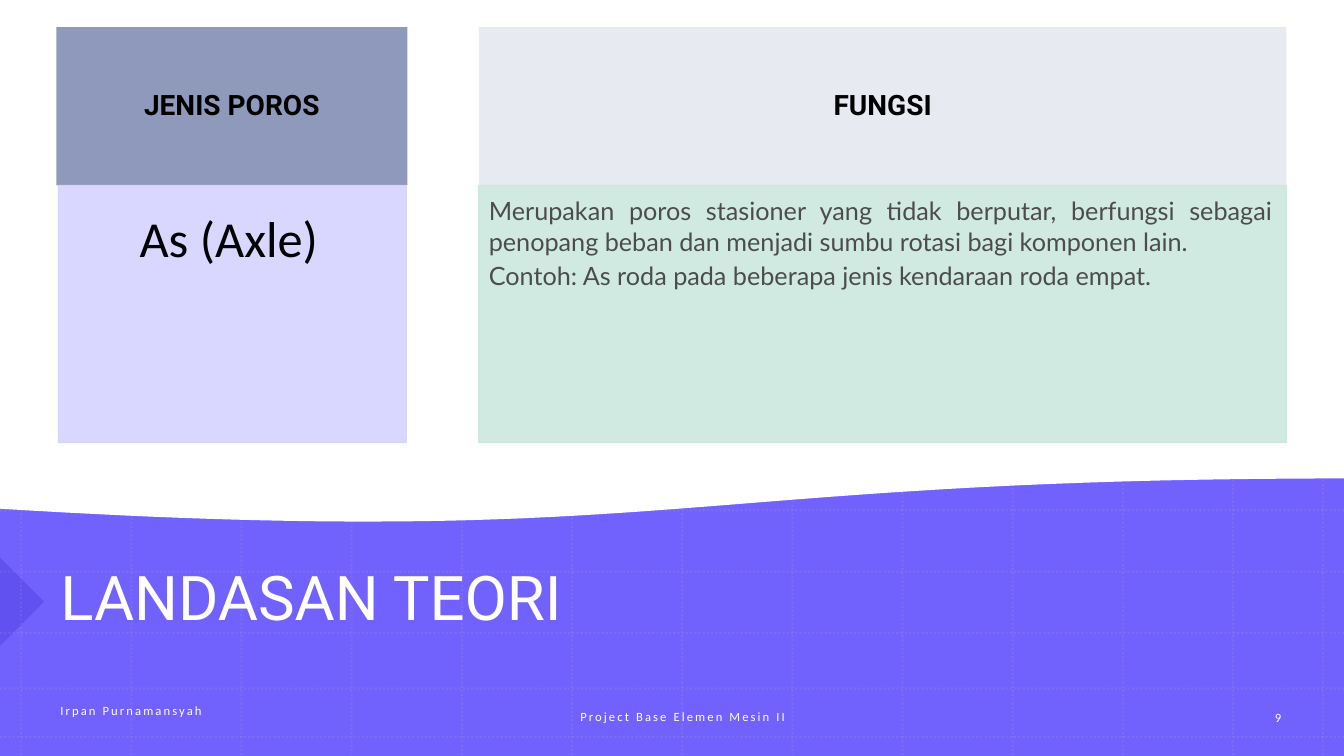
"""Build the LANDASAN TEORI slide about the axle type of shaft."""
from dataclasses import dataclass

from lxml import etree
from pptx import Presentation
from pptx.dml.color import RGBColor
from pptx.enum.dml import MSO_LINE
from pptx.enum.shapes import MSO_CONNECTOR, MSO_SHAPE
from pptx.enum.text import MSO_ANCHOR, PP_ALIGN
from pptx.oxml.ns import qn
from pptx.util import Inches, Pt

COLORS = {
    "violet": "7162FE", "navy": "1201AF", "grid": "B495C2", "white": "FFFFFF",
    "slate": "8F99BB", "lilac": "D5D3FF", "mint": "CCE8DE",
    "black": "000000", "gray": "4C4C4D",
}
WIDTH, HEIGHT = 13.33, 7.5
Box = tuple[float, float, float, float]


@dataclass
class Text:
    lines: tuple[str, ...]
    font: str
    size: float
    color: str
    align: PP_ALIGN = PP_ALIGN.LEFT
    anchor: MSO_ANCHOR = MSO_ANCHOR.MIDDLE
    margins: Box = (0.1, 0.05, 0.1, 0.05)
    bold: bool = False
    line_spacing: float = 1.0
    space_after: float = 0
    tracking: float = 0


@dataclass
class Panel:
    box: Box
    fill: str
    alpha: int
    outlined: bool
    text: Text


@dataclass
class Label:
    box: Box
    text: Text


def rgb(name: str) -> RGBColor:
    return RGBColor.from_string(COLORS[name])


def set_alpha(sp, percent: int) -> None:
    for clr in sp._element.spPr.iter(qn("a:srgbClr")):
        etree.SubElement(clr, qn("a:alpha")).set("val", str(percent * 1000))


def paint(sp, fill: str, line_width: float = 0, alpha: int = 100) -> None:
    sp.shadow.inherit = False
    sp.fill.solid()
    sp.fill.fore_color.rgb = rgb(fill)
    if line_width:
        sp.line.color.rgb = rgb(fill)
        sp.line.width = Pt(line_width)
    else:
        sp.line.fill.background()
    if alpha < 100:
        set_alpha(sp, alpha)


def add_shape(s, kind: MSO_SHAPE, box: Box, fill: str,
              line_width: float = 0, alpha: int = 100):
    sp = s.shapes.add_shape(kind, *map(Inches, box))
    paint(sp, fill, line_width, alpha)
    return sp


def write(sp, text: Text) -> None:
    tf = sp.text_frame
    tf.word_wrap = True
    tf.vertical_anchor = text.anchor
    (tf.margin_left, tf.margin_top,
     tf.margin_right, tf.margin_bottom) = map(Inches, text.margins)
    for i, line in enumerate(text.lines):
        p = tf.add_paragraph() if i else tf.paragraphs[0]
        p.alignment = text.align
        p.line_spacing = text.line_spacing
        p.space_after = Pt(text.space_after)
        r = p.add_run()
        r.text = line
        p.font.name = text.font
        p.font.size = Pt(text.size)
        p.font.bold = text.bold
        p.font.color.rgb = rgb(text.color)
        if text.tracking:
            r._r.get_or_add_rPr().set("spc", str(int(text.tracking * 100)))


def add_grid_line(s, x1: float, y1: float, x2: float, y2: float) -> None:
    line = s.shapes.add_connector(
        MSO_CONNECTOR.STRAIGHT, *map(Inches, (x1, y1, x2, y2)))
    line.line.color.rgb = rgb("grid")
    line.line.width = Pt(1.5)
    line.line.dash_style = MSO_LINE.ROUND_DOT
    set_alpha(line, 20)
    etree.SubElement(line._element.spPr, qn("a:effectLst"))


def add_grid(s) -> None:
    columns = [0.21 + i * (12.23 - 0.21) / 11 for i in range(12)] + [13.12]
    rows = [0.19 + i * (6.28 - 0.19) / 10 for i in range(11)] + [6.83, 7.31]
    for x in columns:
        add_grid_line(s, x, 0, x, HEIGHT)
    for y in rows:
        add_grid_line(s, 0, y, WIDTH, y)


def bezier(a: float, b: float, c: float, d: float, t: float) -> float:
    u = 1 - t
    return u**3 * a + 3 * u**2 * t * b + 3 * u * t**2 * c + t**3 * d


def add_wave(s, steps: int = 60) -> None:
    right, top = 13.35, -0.03
    curve = [(bezier(right, 6.7, 6.66, 0, i / steps),
              bezier(4.74, 4.74, 5.45, 5.04, i / steps))
             for i in range(steps + 1)]
    points = [(Inches(x), Inches(y)) for x, y in [(right, top), *curve]]
    builder = s.shapes.build_freeform(0, Inches(top))
    builder.add_line_segments(points, close=True)
    paint(builder.convert_to_shape(), "white", 1)


def heading(line: str) -> Text:
    return Text((line,), "Roboto", 20, "black", PP_ALIGN.CENTER,
                margins=(0.16, 0.09, 0.16, 0.09), bold=True, line_spacing=0.9)


def footer(line: str, align: PP_ALIGN = PP_ALIGN.CENTER,
           bottom: float = 0.05) -> Text:
    return Text((line,), "Calibri", 9, "white", align,
                margins=(0.1, 0.05, 0.1, bottom), tracking=1.5)


PANELS = [
    Panel((0.56, 0.27, 3.48, 1.57), "slate", 100, False,
          heading("JENIS POROS")),
    Panel((0.58, 1.84, 3.45, 2.55), "lilac", 90, True,
          Text(("As (Axle)",), "Calibri", 36, "black", PP_ALIGN.CENTER,
               MSO_ANCHOR.TOP, (0.21, 0.21, 0.28, 0.32))),
    Panel((4.75, 0.27, 8.01, 1.57), "slate", 20, False, heading("FUNGSI")),
    Panel((4.75, 1.84, 8.01, 2.55), "mint", 90, True,
          Text(("Merupakan poros stasioner yang tidak berputar, berfungsi "
                "sebagai penopang beban dan menjadi sumbu rotasi bagi "
                "komponen lain.",
                "Contoh: As roda pada beberapa jenis kendaraan roda empat."),
               "Lato", 18, "gray", PP_ALIGN.JUSTIFY, MSO_ANCHOR.TOP,
               (0.1, 0.1, 0.14, 0.16), space_after=2.7)),
]
LABELS = [
    Label((0.5, 5.09, 11.75, 1.74),
          Text(("LANDASAN TEORI",), "Roboto", 44, "white", line_spacing=0.9)),
    Label((0.5, 6.92, 2.8, 0.4),
          footer("Irpan Purnamansyah", PP_ALIGN.LEFT, 0.2)),
    Label((4.59, 6.91, 4.36, 0.4), footer("Project Base Elemen Mesin II")),
    Label((12.24, 6.92, 0.87, 0.4), footer("9")),
]


def main() -> None:
    prs = Presentation()
    prs.slide_width, prs.slide_height = Inches(WIDTH), Inches(HEIGHT)
    s = prs.slides.add_slide(prs.slide_layouts[6])
    add_shape(s, MSO_SHAPE.RECTANGLE, (0, 0, 13.35, HEIGHT), "violet")
    marker = add_shape(s, MSO_SHAPE.RIGHT_TRIANGLE,
                       (-0.31, 5.66, 0.62, 0.62), "navy", alpha=17)
    marker.rotation = 225
    add_grid(s)
    add_wave(s)
    for label in LABELS:
        write(s.shapes.add_textbox(*map(Inches, label.box)), label.text)
    for panel in PANELS:
        sp = add_shape(s, MSO_SHAPE.RECTANGLE, panel.box, panel.fill,
                       1 if panel.outlined else 0, panel.alpha)
        write(sp, panel.text)
    prs.save("out.pptx")


if __name__ == "__main__":
    main()
